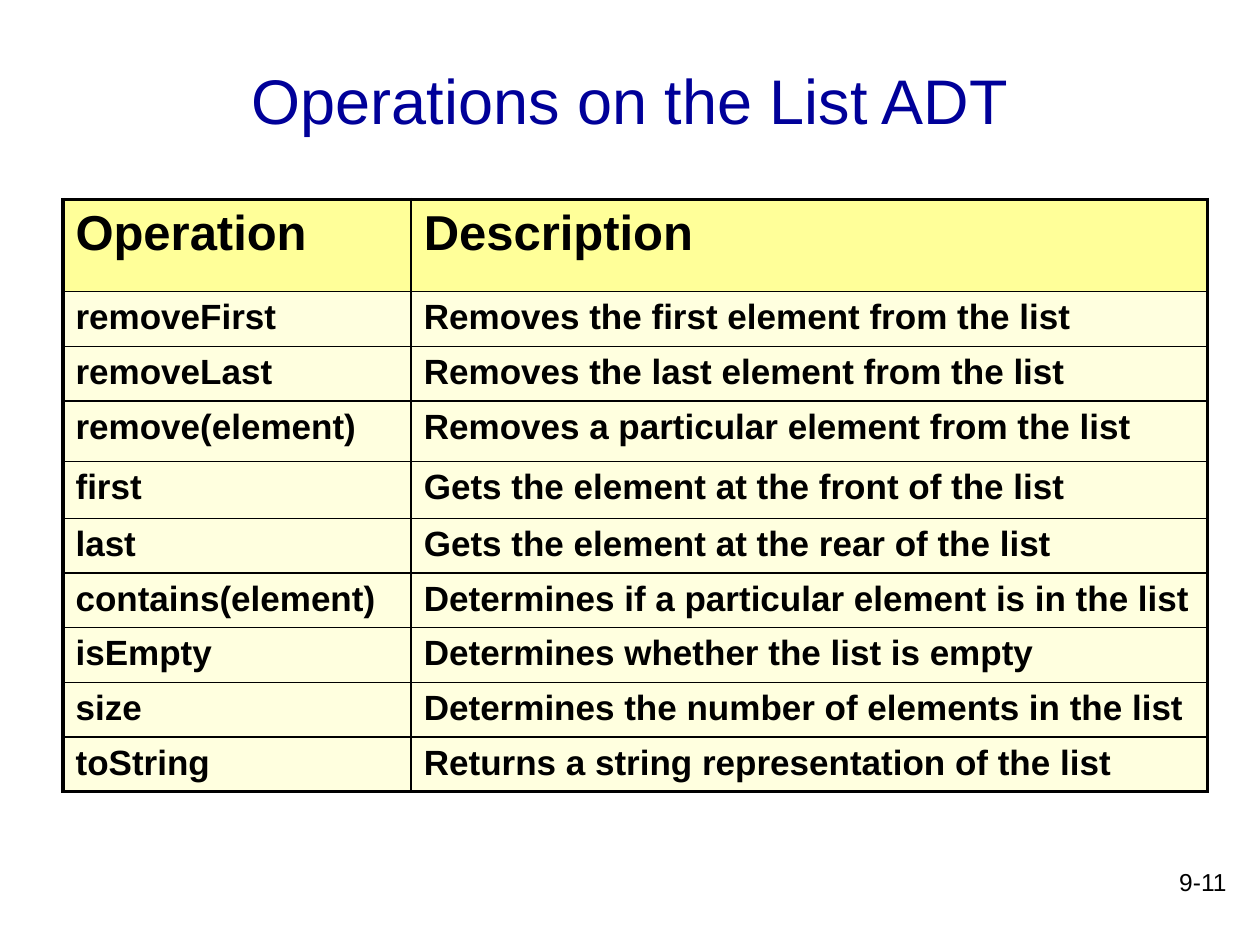
from lxml import etree
from pptx import Presentation
from pptx.dml.color import RGBColor
from pptx.enum import text as t
from pptx.oxml.ns import qn
from pptx.util import Pt

ROWS = [
    ("Operation", "Description"),
    ("removeFirst", "Removes the first element from the list"),
    ("removeLast", "Removes the last element from the list"),
    ("remove(element)", "Removes a particular element from the list"),
    ("first", "Gets the element at the front of the list"),
    ("last", "Gets the element at the rear of the list"),
    ("contains(element)", "Determines if a particular element is in the list"),
    ("isEmpty", "Determines whether the list is empty"),
    ("size", "Determines the number of elements in the list"),
    ("toString", "Returns a string representation of the list"),
]
HEIGHTS = [52.5, 31.5, 31, 34.5, 32.5] + [31.2] * 5
WIDTHS = [199, 455]
THIN, THICK = 1, 2.25


def color(code):
    return RGBColor.from_string(code)


def write(frame, words, size, ink="000000", bold=False, align=t.PP_ALIGN.LEFT):
    para = frame.paragraphs[0]
    para.alignment = align
    run = para.add_run()
    run.text = words
    form = {"name": "Arial", "size": Pt(size), "bold": bold}
    for key, value in form.items():
        setattr(run.font, key, value)
    run.font.color.rgb = color(ink)


def add_label(slide, box, words, size, anchor, **style):
    frame = slide.shapes.add_textbox(*map(Pt, box)).text_frame
    frame.word_wrap = True
    frame.vertical_anchor = anchor
    write(frame, words, size, **style)


def add_borders(cell, widths):
    """Draw black cell borders; widths maps the side letters L, R, T, B to points."""
    props = cell._tc.get_or_add_tcPr()
    for side, width in widths.items():
        line = etree.SubElement(props, qn(f"a:ln{side}"), w=str(Pt(width)))
        fill = etree.SubElement(line, qn("a:solidFill"))
        etree.SubElement(fill, qn("a:srgbClr"), val="000000")


def add_grid(slide, left, top):
    shape = slide.shapes.add_table(
        len(ROWS), len(WIDTHS), Pt(left), Pt(top), Pt(sum(WIDTHS)), Pt(sum(HEIGHTS)))
    table = shape.table
    table.horz_banding = False
    for col, width in zip(table.columns, WIDTHS):
        col.width = Pt(width)
    for row, height in zip(table.rows, HEIGHTS):
        row.height = Pt(height)
    last_row, last_col = len(ROWS) - 1, len(WIDTHS) - 1
    for r, line in enumerate(ROWS):
        for c, words in enumerate(line):
            cell = table.cell(r, c)
            outer = {"L": c == 0, "R": c == last_col, "T": r == 0, "B": r == last_row}
            add_borders(cell, {k: THICK if edge else THIN for k, edge in outer.items()})
            cell.fill.solid()
            cell.fill.fore_color.rgb = color("FFFFDF" if r else "FFFF99")
            write(cell.text_frame, words, 20 if r else 28, bold=True)


def main():
    deck = Presentation()
    deck.slide_width, deck.slide_height = Pt(720), Pt(540)
    slide = deck.slides.add_slide(deck.slide_layouts[6])
    add_label(slide, (558, 492, 150, 36), "9-11", 14, t.MSO_ANCHOR.TOP,
              align=t.PP_ALIGN.RIGHT)
    add_label(slide, (54, 12, 612, 90), "Operations on the List ADT", 36,
              t.MSO_ANCHOR.MIDDLE, ink="000099", align=t.PP_ALIGN.CENTER)
    add_grid(slide, 36, 114)
    deck.save("out.pptx")


if __name__ == "__main__":
    main()
